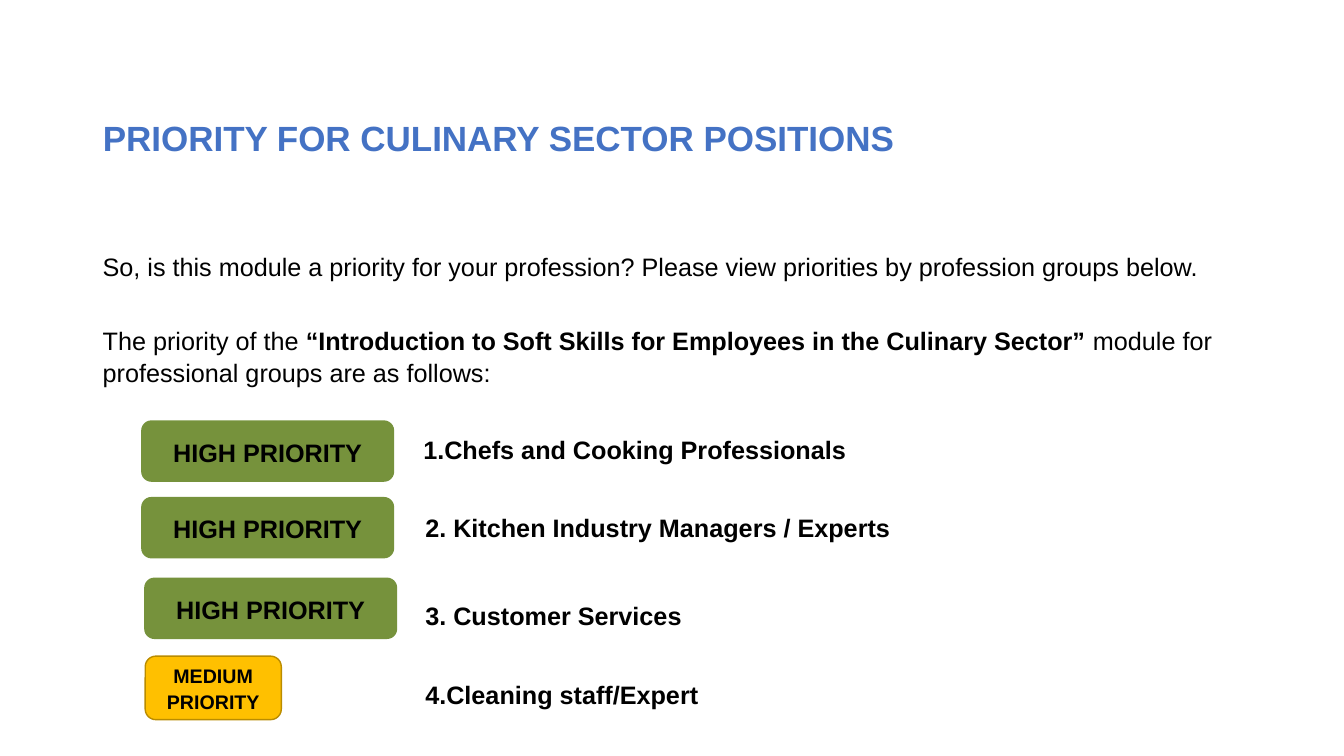
"""Build the slide on module priority for culinary sector positions."""
from pptx import Presentation
from pptx.dml.color import RGBColor
from pptx.enum.shapes import MSO_SHAPE
from pptx.enum.text import MSO_ANCHOR, PP_ALIGN
from pptx.util import Emu, Pt

PX = 9144
BLUE = RGBColor(0x44, 0x72, 0xC4)
BLACK = RGBColor(0x00, 0x00, 0x00)
GREEN = RGBColor(0x76, 0x92, 0x3C)
AMBER = RGBColor(0xFF, 0xC0, 0x00)
DARK_AMBER = RGBColor(0xBA, 0x8C, 0x00)


def box(*lengths):
    return [Emu(length * PX) for length in lengths]


def style(paragraph, size, color=BLACK, bold=False, spacing=None):
    paragraph.line_spacing = spacing
    font = paragraph.font
    font.name = "Arial"
    font.size = Pt(size)
    font.bold = bold
    font.color.rgb = color


presentation = Presentation()
presentation.slide_width, presentation.slide_height = box(1333, 750)
slide = presentation.slides.add_slide(presentation.slide_layouts[5])
shapes = slide.shapes

title = shapes.title
title.left, title.top, title.width, title.height = box(92, 79, 1150, 156)
title_frame = title.text_frame
title_frame.text = "PRIORITY FOR CULINARY SECTOR POSITIONS"
title_frame.vertical_anchor = MSO_ANCHOR.MIDDLE
title_frame.margin_bottom = Emu(41 * PX)
title_frame.paragraphs[0].alignment = PP_ALIGN.LEFT
style(title_frame.paragraphs[0], 25, BLUE, True, 0.9)

intro_frame = shapes.add_textbox(*box(92, 242, 1150, 169)).text_frame
intro_frame.word_wrap = True
question = intro_frame.paragraphs[0]
question.text = (
    "So, is this module a priority for your profession? "
    "Please view priorities by profession groups below."
)
style(question, 18, spacing=1.07)
explanation = intro_frame.add_paragraph()
explanation.space_before = Pt(30)
style(explanation, 18, spacing=1.07)
for text, bold in [
    ("The priority of the ", False),
    ("“Introduction to Soft Skills for Employees in the Culinary Sector” ", True),
    ("module for professional groups are as follows:", False),
]:
    run = explanation.add_run()
    run.text = text
    run.font.bold = bold

HIGH = ("HIGH PRIORITY", 251, 61, 18, GREEN, None)
MEDIUM = ("MEDIUM PRIORITY", 135, 63, 14, AMBER, DARK_AMBER)
positions = [
    (HIGH, 140, 417, "1.Chefs and Cooking Professionals", 410, 426),
    (HIGH, 140, 493, "2. Kitchen Industry Managers / Experts", 412, 503),
    (HIGH, 143, 573, "3. Customer Services", 412, 591),
    (MEDIUM, 144, 651, "4.Cleaning staff/Expert", 412, 669),
]
for priority, badge_left, badge_top, position, label_left, label_top in positions:
    text, width, height, size, fill, outline = priority
    badge = shapes.add_shape(
        MSO_SHAPE.ROUNDED_RECTANGLE, *box(badge_left, badge_top, width, height)
    )
    badge.shadow.inherit = False
    badge.fill.solid()
    badge.fill.fore_color.rgb = fill
    if outline is None:
        badge.line.fill.background()
    else:
        badge.line.color.rgb = outline
        badge.line.width = Pt(1)
    badge_frame = badge.text_frame
    badge_frame.text = text
    badge_frame.word_wrap = True
    badge_frame.vertical_anchor = MSO_ANCHOR.MIDDLE
    badge_frame.paragraphs[0].alignment = PP_ALIGN.CENTER
    style(badge_frame.paragraphs[0], size, bold=True, spacing=1.07)

    label_frame = shapes.add_textbox(*box(label_left, label_top, 830, 40)).text_frame
    label_frame.word_wrap = True
    label_frame.text = position
    style(label_frame.paragraphs[0], 18, bold=True)

presentation.save("out.pptx")
